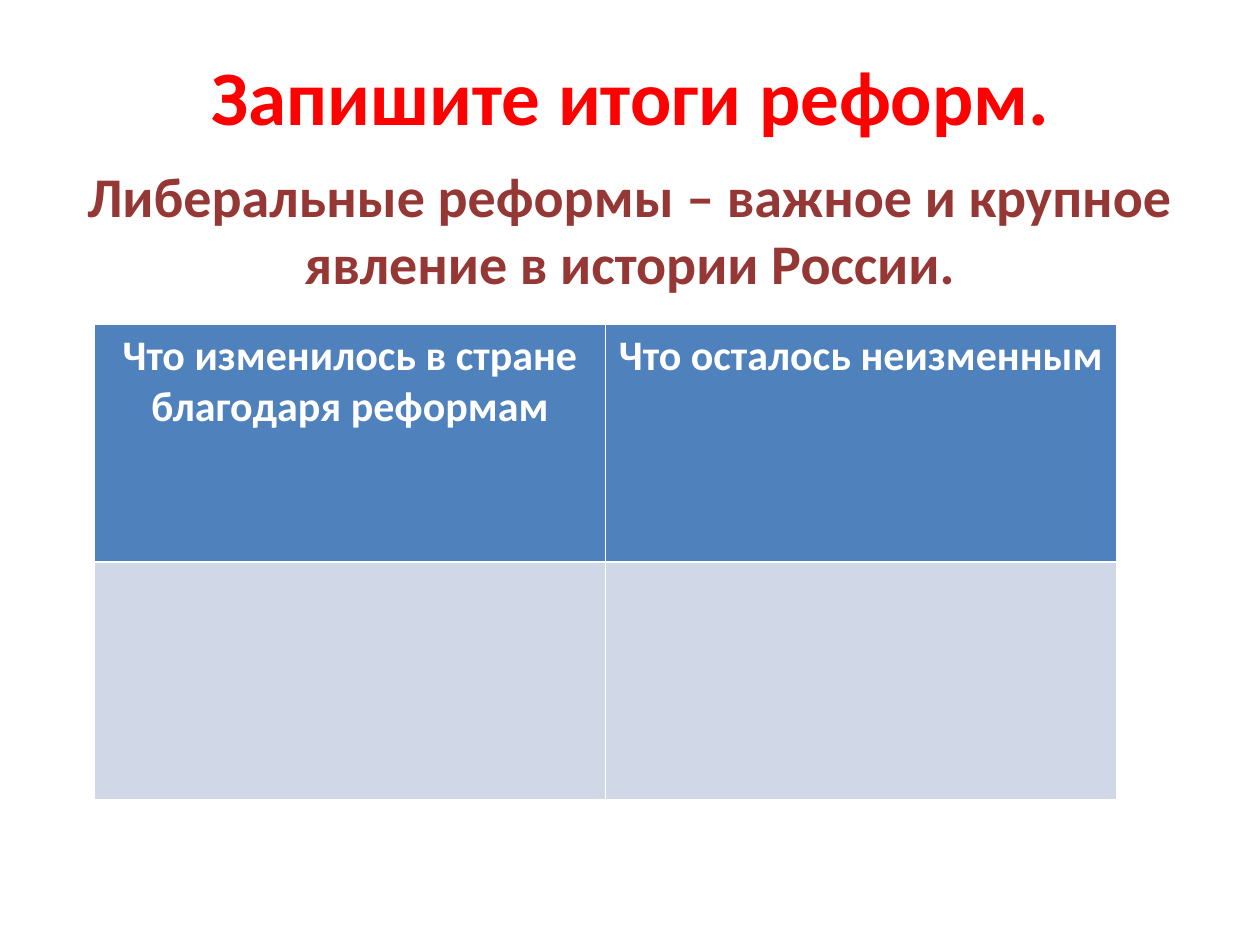
import pptx
import pptx.util
import pptx.dml.color
import pptx.enum.text

Inches = pptx.util.Inches
COLORS = {
    "title": "FF0000",
    "body": "953735",
    "header": "4F81BD",
    "cell": "D0D8E8",
    "white": "FFFFFF",
}


def write(tf, text, size, color, before=0, anchor=pptx.enum.text.MSO_ANCHOR.TOP):
    tf.word_wrap = True
    tf.vertical_anchor = anchor
    p = tf.paragraphs[0]
    p.alignment = pptx.enum.text.PP_ALIGN.CENTER
    p.space_before = pptx.util.Pt(before)
    r = p.add_run()
    r.text = text
    r.font.name = "Calibri"
    r.font.size = pptx.util.Pt(size)
    r.font.bold = True
    r.font.color.rgb = pptx.dml.color.RGBColor.from_string(COLORS[color])


prs = pptx.Presentation()
prs.slide_width = Inches(10)
prs.slide_height = Inches(7.5)
s = prs.slides.add_slide(prs.slide_layouts[6])

sp = s.shapes.add_textbox(Inches(0.51), Inches(0.13), Inches(9), Inches(1.25))
write(sp.text_frame, "Запишите итоги реформ.", size=44, color="title",
      anchor=pptx.enum.text.MSO_ANCHOR.MIDDLE)

sp = s.shapes.add_textbox(Inches(0.5), Inches(1.23), Inches(9), Inches(5.98))
write(sp.text_frame, "Либеральные реформы – важное и крупное явление в истории России.",
      size=32, color="body", before=6.4)

headers = ["Что изменилось в стране благодаря реформам", "Что осталось неизменным"]
table = s.shapes.add_table(2, len(headers), Inches(0.75), Inches(2.57),
                           Inches(8.11), Inches(3.78)).table
for row, fill in zip(table.rows, ["header", "cell"]):
    for cell in row.cells:
        cell.fill.solid()
        cell.fill.fore_color.rgb = pptx.dml.color.RGBColor.from_string(COLORS[fill])
for cell, text in zip(table.rows[0].cells, headers):
    write(cell.text_frame, text, size=24, color="white")

prs.save("out.pptx")
